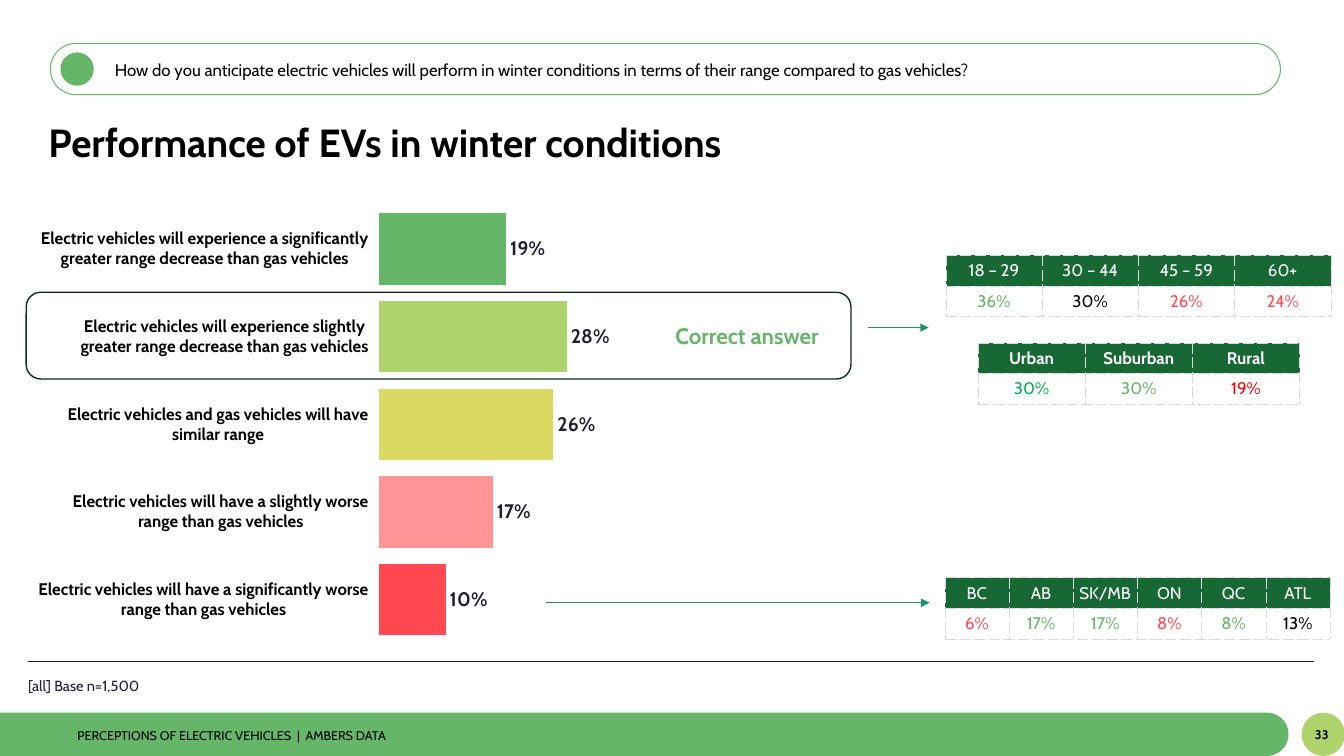
from math import cos, pi, sin

from lxml import etree
from pptx import Presentation
from pptx.chart.data import CategoryChartData
from pptx.dml.color import RGBColor
from pptx.enum.chart import XL_CHART_TYPE, XL_LABEL_POSITION, XL_TICK_MARK
from pptx.enum.shapes import MSO_CONNECTOR, MSO_SHAPE
from pptx.enum.text import MSO_ANCHOR, PP_ALIGN
from pptx.oxml import parse_xml
from pptx.oxml.ns import nsdecls, qn
from pptx.util import Inches, Pt

OVAL, ROUNDED = MSO_SHAPE.OVAL, MSO_SHAPE.ROUNDED_RECTANGLE
STRAIGHT = MSO_CONNECTOR.STRAIGHT
TOP, MIDDLE = MSO_ANCHOR.TOP, MSO_ANCHOR.MIDDLE
LEFT, CENTER = PP_ALIGN.LEFT, PP_ALIGN.CENTER
FONT = "Cabin"
GREEN, LIME, RED, BLACK, WHITE = "65B668", "AED36D", "FF4850", "000000", "FFFFFF"
NAVY, HEADER, ARROW, FRAME = "202036", "186836", "169964", "0B2E18"


def color(value):
    return RGBColor.from_string(value)


def write(frame, text, size, text_color, bold=False, align=LEFT, anchor=TOP, spacing=0.9):
    frame.word_wrap = True
    frame.vertical_anchor = anchor
    paragraph = frame.paragraphs[0]
    paragraph.alignment = align
    paragraph.line_spacing = spacing
    paragraph.space_before = Pt(0)
    run = paragraph.add_run()
    run.text = text
    run.font.name, run.font.size, run.font.bold = FONT, Pt(size), bold
    run.font.color.rgb = color(text_color)


presentation = Presentation()
presentation.slide_width, presentation.slide_height = Inches(13.33), Inches(7.5)
slide = presentation.slides.add_slide(presentation.slide_layouts[5])
shapes = slide.shapes

# Footer band with a rounded right end
radius, band_right, band_top = 0.215, 12.78, 7.07
arc = []
for step in range(25):
    angle = -pi / 2 + pi * step / 24
    arc.append((Inches(band_right - radius + radius * cos(angle)),
                Inches(band_top + radius + radius * sin(angle))))
builder = shapes.build_freeform(0, Inches(band_top))
builder.add_line_segments(arc + [(0, Inches(7.5))], close=True)
band = builder.convert_to_shape()
band.shadow.inherit = False
band.fill.solid()
band.fill.fore_color.rgb = color(GREEN)
band.line.fill.background()

# Discs and rounded frames: kind, box, fill, line, line width, corner
for kind, box, fill, line, width, corner in [
    (OVAL, (12.91, 7.07, 0.43, 0.43), LIME, None, 0, None),
    (ROUNDED, (0.5, 0.43, 12.2, 0.51), None, GREEN, 0.75, 0.5),
    (OVAL, (0.6, 0.52, 0.33, 0.33), GREEN, None, 0, None),
    (ROUNDED, (0.26, 2.9, 8.18, 0.86), None, FRAME, 1, 0.167),
]:
    shape = shapes.add_shape(kind, *map(Inches, box))
    shape.shadow.inherit = False
    if fill:
        shape.fill.solid()
        shape.fill.fore_color.rgb = color(fill)
    else:
        shape.fill.background()
    if line:
        shape.line.color.rgb = color(line)
        shape.line.width = Pt(width)
    else:
        shape.line.fill.background()
    if corner:
        shape.adjustments[0] = corner

# Title
title = shapes.title
title.left, title.top, title.width, title.height = map(Inches, (0.38, 1.14, 12.2, 0.6))
write(title.text_frame, "Performance of EVs in winter conditions", 28, BLACK, True, anchor=MIDDLE)

# Bar chart of answers
answers = [
    ("Electric vehicles will experience a significantly greater range decrease than gas vehicles", 0.19, GREEN),
    ("Electric vehicles will experience slightly greater range decrease than gas vehicles", 0.28, LIME),
    ("Electric vehicles and gas vehicles will have similar range", 0.26, "DADA62"),
    ("Electric vehicles will have a slightly worse range than gas vehicles", 0.17, "FF9496"),
    ("Electric vehicles will have a significantly worse range than gas vehicles", 0.1, RED),
]
data = CategoryChartData(number_format="0%")
data.categories = [answer for answer, share, fill in answers]
data.add_series("Series 1", [share for answer, share, fill in answers])
chart = shapes.add_chart(XL_CHART_TYPE.BAR_CLUSTERED, Inches(0.38), Inches(1.88),
                         Inches(10.56), Inches(4.66), data).chart
chart.has_legend = chart.has_title = False
chart.font.name, chart.font.size, chart.font.bold = FONT, Pt(16), True
chart.font.color.rgb = color(BLACK)

category_axis, value_axis = chart.category_axis, chart.value_axis
category_axis.reverse_order = True
category_axis.major_tick_mark = XL_TICK_MARK.OUTSIDE
category_axis.format.line.fill.background()
axis_font = category_axis.tick_labels.font
axis_font.name, axis_font.size, axis_font.bold = FONT, Pt(12), True
axis_font.color.rgb = color(BLACK)
value_axis.minimum_scale, value_axis.maximum_scale = 0, 1
value_axis.has_major_gridlines = False
value_axis.visible = False

plot = chart.plots[0]
plot.gap_width = 23
plot.vary_by_categories = False
series = plot.series[0]
series.format.fill.solid()
series.format.fill.fore_color.rgb = color(GREEN)
for index, (answer, share, fill) in enumerate(answers):
    point_fill = series.points[index].format.fill
    point_fill.solid()
    point_fill.fore_color.rgb = color(fill)
labels = series.data_labels
labels.show_value = True
labels.position = XL_LABEL_POSITION.OUTSIDE_END
labels.number_format, labels.number_format_is_linked = "0%", False
labels.font.name, labels.font.size, labels.font.bold = FONT, Pt(14), True
labels.font.color.rgb = color("201E30")

# Fixed inner plot area
plot_area = chart._chartSpace.chart.plotArea
for old_layout in plot_area.findall(qn("c:layout")):
    plot_area.remove(old_layout)
plot_area.insert(0, parse_xml(
    f'<c:layout {nsdecls("c")}><c:manualLayout><c:layoutTarget val="inner"/>'
    '<c:xMode val="edge"/><c:yMode val="edge"/><c:x val="0.316"/><c:y val="0.033"/>'
    '<c:w val="0.635"/><c:h val="0.934"/></c:manualLayout></c:layout>'))

# Text boxes: box, text, size, colour, bold, alignment, anchor, line spacing
for box, *text_format in [
    ((12.83, 7.08, 0.56, 0.43), "33", 9, BLACK, True, CENTER, MIDDLE, 0.9),
    ((0.67, 7.19, 9.57, 0.21), "PERCEPTIONS OF ELECTRIC VEHICLES  |  AMBERS DATA",
     9, BLACK, False, LEFT, TOP, 0.9),
    ((1.04, 0.54, 11.54, 0.3), "How do you anticipate electric vehicles will perform in winter "
     "conditions in terms of their range compared to gas vehicles?",
     12, BLACK, False, LEFT, MIDDLE, 1),
    ((0.18, 6.69, 10.56, 0.33), "[all] Base n=1,500", 10.5, NAVY, False, LEFT, TOP, 0.9),
    ((6.42, 3.15, 1.98, 0.37), "Correct answer", 16, GREEN, True, CENTER, TOP, 1),
]:
    write(shapes.add_textbox(*map(Inches, box)).text_frame, *text_format)

# Footer rule and arrows to the tables
for start, end, y, line, width, arrow in [
    (0.28, 13.03, 6.56, NAVY, 0.5, False),
    (8.61, 9.21, 3.25, ARROW, 1, True),
    (5.42, 9.22, 5.98, ARROW, 1, True),
]:
    connector = shapes.add_connector(STRAIGHT, Inches(start), Inches(y), Inches(end), Inches(y))
    connector.line.color.rgb = color(line)
    connector.line.width = Pt(width)
    if arrow:
        etree.SubElement(connector.line._get_or_add_ln(), qn("a:tailEnd"), type="triangle")
    etree.SubElement(connector._element.spPr, qn("a:effectLst"))

# Breakdown tables: left, top, width, bold header, columns of (group, share, colour)
for left, top, width, bold, columns in [
    (9.7, 3.4, 3.19, True,
     [("Urban", "30%", "00B050"), ("Suburban", "30%", GREEN), ("Rural", "19%", "FF0000")]),
    (9.38, 2.53, 3.82, False,
     [("18 – 29", "36%", GREEN), ("30 – 44", "30%", BLACK), ("45 – 59", "26%", RED),
      ("60+", "24%", RED)]),
    (9.37, 5.73, 3.82, False,
     [("BC", "6%", RED), ("AB", "17%", GREEN), ("SK/MB", "17%", GREEN), ("ON", "8%", RED),
      ("QC", "8%", GREEN), ("ATL", "13%", BLACK)]),
]:
    table = shapes.add_table(2, len(columns), Inches(left), Inches(top),
                             Inches(width), Inches(0.61)).table
    table.first_row = table.horz_banding = False
    for column, (group, share, share_color) in enumerate(columns):
        for row, text, text_color in [(0, group, WHITE), (1, share, share_color)]:
            cell = table.cell(row, column)
            cell.margin_left = cell.margin_right = cell.margin_top = cell.margin_bottom = 0
            write(cell.text_frame, text, 12, text_color, bold and row == 0, CENTER, spacing=1)
            cell.vertical_anchor = MIDDLE
            if row == 0:
                cell.fill.solid()
                cell.fill.fore_color.rgb = color(HEADER)
            else:
                cell.fill.background()
            for position, side in enumerate("LRTB"):
                cell._tc.get_or_add_tcPr().insert(position, parse_xml(
                    f'<a:ln{side} {nsdecls("a")} w="3175"><a:solidFill><a:srgbClr val="D9D9D9"/>'
                    f'</a:solidFill><a:prstDash val="lgDash"/></a:ln{side}>'))

presentation.save("out.pptx")
